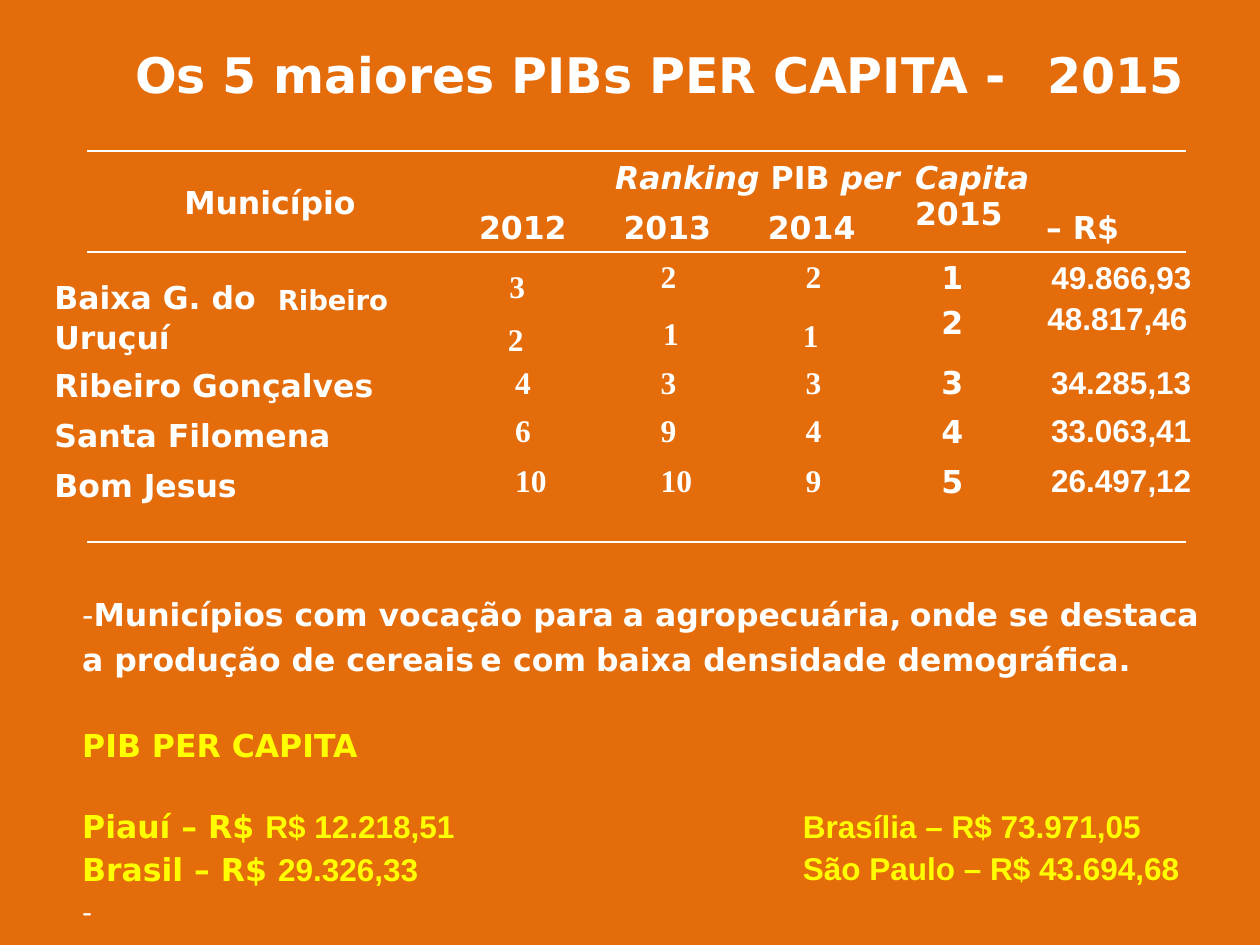
import dataclasses

import pptx
import pptx.dml.color
import pptx.enum.shapes
import pptx.enum.text
import pptx.oxml
import pptx.oxml.ns
import pptx.util

Pt = pptx.util.Pt


@dataclasses.dataclass(frozen=True)
class Theme:
    background: str = "E46C0A"
    light: str = "FFFFFF"
    accent: str = "FFFF00"
    heading: str = "DejaVu Sans"
    number: str = "Times New Roman"
    money: str = "Arial"
    title_size: float = 28
    body_size: float = 18
    lowered_size: float = 27
    dash_size: float = 16


THEME = Theme()


@dataclasses.dataclass(frozen=True)
class Run:
    text: str
    font: str = None
    size: float = None
    color: str = None
    bold: bool = None
    italic: bool = None
    baseline: int = None
    tracking: int = None


@dataclasses.dataclass(frozen=True)
class Line:
    content: object
    before: float = 1
    spacing: float = None


def rgb(color):
    return pptx.dml.color.RGBColor.from_string(color)


def style_font(font, name=None, size=None, color=None, bold=None, italic=None):
    if name:
        font.name = name
    if size:
        font.size = Pt(size)
    if color:
        font.color.rgb = rgb(color)
    if bold is not None:
        font.bold = bold
    if italic is not None:
        font.italic = italic


def add_run(paragraph, part):
    run = paragraph.add_run()
    run.text = part.text
    style_font(run.font, part.font, part.size, part.color, part.bold, part.italic)
    properties = run._r.get_or_add_rPr()
    if part.baseline is not None:
        properties.set("baseline", str(part.baseline))
    if part.tracking is not None:
        properties.set("spc", str(part.tracking))


def add_text(slide, left, top, width, height, lines, font=THEME.heading,
             size=THEME.body_size, color=THEME.light, indent=0.9):
    box = slide.shapes.add_textbox(Pt(left), Pt(top), Pt(width), Pt(height))
    frame = box.text_frame
    frame.word_wrap = True
    frame.auto_size = pptx.enum.text.MSO_AUTO_SIZE.NONE
    frame.margin_left = Pt(indent)
    frame.margin_top = frame.margin_right = frame.margin_bottom = 0
    first_spacing = 30 if size == THEME.title_size else 19.5
    for index, line in enumerate([lines] if isinstance(lines, str) else lines):
        if not isinstance(line, Line):
            line = Line(line)
        paragraph = frame.paragraphs[0] if index == 0 else frame.add_paragraph()
        paragraph.space_before = Pt(line.before)
        paragraph.line_spacing = line.spacing or Pt(first_spacing)
        style_font(paragraph.font, font, size, color, True)
        parts = [Run(line.content)] if isinstance(line.content, str) else line.content
        for part in parts:
            add_run(paragraph, part)


def add_rule(slide, top):
    rule = slide.shapes.add_connector(
        pptx.enum.shapes.MSO_CONNECTOR.STRAIGHT, Pt(49.7), Pt(top), Pt(677.8), Pt(top))
    rule.line.color.rgb = rgb(THEME.light)
    rule.line.width = Pt(1)
    properties = rule._element.spPr
    properties.append(pptx.oxml.parse_xml(
        "<a:effectLst %s/>" % pptx.oxml.ns.nsdecls("a")))


def add_title(slide):
    for left, width, text in ((76.3, 518, "Os 5 maiores PIBs PER CAPITA -"),
                              (597.6, 86, "2015")):
        add_text(slide, left, 28.8, width, 30, text, size=THEME.title_size)


def add_table_heading(slide):
    ranking = [Run("Ranking ", italic=True), Run("PIB "), Run("per", italic=True)]
    add_text(slide, 350.6, 92.2, 170, 20, [ranking])
    add_text(slide, 522, 92.2, 73.5, 49, [[Run("Capita", italic=True)], "2015"])
    add_text(slide, 104.4, 106.6, 101.5, 20, "Município")
    for index, year in enumerate(("2012", "2013", "2014")):
        add_text(slide, 272.9 + 82.5 * index, 121, 56, 20, year)
    add_text(slide, 596.9, 121, 50.5, 20, "– R$")


def add_municipalities(slide):
    first = [Run("Baixa G. do"), Run(" ", tracking=630),
             Run("Ribeiro", size=THEME.lowered_size, baseline=-2000)]
    add_text(slide, 30.2, 149.8, 242.6, 157, [
        Line(first, 6.1, 1.01),
        "Uruçuí",
        Line("Ribeiro Gonçalves", 5.8, 1.01),
        Line("Santa Filomena", 6.9, 1.01),
        Line("Bom Jesus", 6.9, 1.01),
    ])


def add_rankings(slide):
    top_rows = (
        (THEME.number, 14, ((290.2, 154.8, "3"), (376.6, 149, "2"), (459.4, 149, "2"),
                            (289.4, 185, "2"), (378, 181.4, "1"), (457.9, 182.9, "1"))),
        (THEME.heading, 17.3, ((537.1, 149.8, "1"), (537.1, 175, "2"))),
        (THEME.money, 87, ((599.8, 149.8, "49.866,93"), (597.6, 172.8, "48.817,46"))),
    )
    for font, width, cells in top_rows:
        for left, top, text in cells:
            add_text(slide, left, top, width, 20, text, font)

    lower_columns = (
        (289.4, 39.6, THEME.number, 5, ("4", "6", "10")),
        (376.6, 23, THEME.number, 0.9, ("3", "9", "10")),
        (459.4, 14, THEME.number, 0.9, ("3", "4", "9")),
        (537.1, 17.3, THEME.heading, 0.9, ("3", "4", "5")),
        (599.8, 82.1, THEME.money, 0.9, ("34.285,13", "33.063,41", "26.497,12")),
    )
    for left, width, font, indent, (third, fourth, fifth) in lower_columns:
        if font == THEME.heading:
            spacing, gaps = 1.01, (6, 6.9)
        else:
            spacing, gaps = 0.96, (7.2, 8.1)
        lines = [third, Line(fourth, gaps[0], spacing), Line(fifth, gaps[1], spacing)]
        add_text(slide, left, 209.5, width, 97, lines, font, indent=indent)


def add_commentary(slide):
    opening = [[Run("-", bold=False), Run("Municípios com vocação para")]]
    rows = (
        (342, ((46.1, 308.2, opening), (355, 162, "a agropecuária,"),
               (519.1, 167.8, "onde se destaca"))),
        (367.9, ((46.1, 226.8, "a produção de cereais"), (273.6, 16.6, "e"),
                 (292.3, 46.8, "com"), (339.8, 59.8, "baixa"),
                 (401, 247, "densidade demográfica."))),
    )
    for top, fragments in rows:
        for left, width, text in fragments:
            add_text(slide, left, top, width, 20, text)


def add_comparison(slide):
    add_text(slide, 46.1, 416.9, 170, 20, "PIB PER CAPITA", color=THEME.accent)
    piaui = [Run("Piauí – R$ "), Run("R$ 12.218,51", font=THEME.money)]
    brasil = [Run("Brasil – R$ "), Run("29.326,33", font=THEME.money)]
    dash = [Run("-", size=THEME.dash_size, color=THEME.light, bold=False)]
    add_text(slide, 46.1, 463, 244.8, 69,
             [piaui, Line(brasil, 3, 1.01), Line(dash, 3.9, 1.01)], color=THEME.accent)
    add_text(slide, 457.9, 463, 238.3, 46,
             ["Brasília – R$ 73.971,05", Line("São Paulo – R$ 43.694,68", 4.2, 0.96)],
             THEME.money, color=THEME.accent)


def main():
    presentation = pptx.Presentation()
    presentation.slide_width = Pt(720)
    presentation.slide_height = Pt(540)
    slide = presentation.slides.add_slide(presentation.slide_layouts[6])
    slide.background.fill.solid()
    slide.background.fill.fore_color.rgb = rgb(THEME.background)
    for top in (86.4, 144, 309.6):
        add_rule(slide, top)
    add_title(slide)
    add_table_heading(slide)
    add_municipalities(slide)
    add_rankings(slide)
    add_commentary(slide)
    add_comparison(slide)
    presentation.save("out.pptx")


if __name__ == "__main__":
    main()
